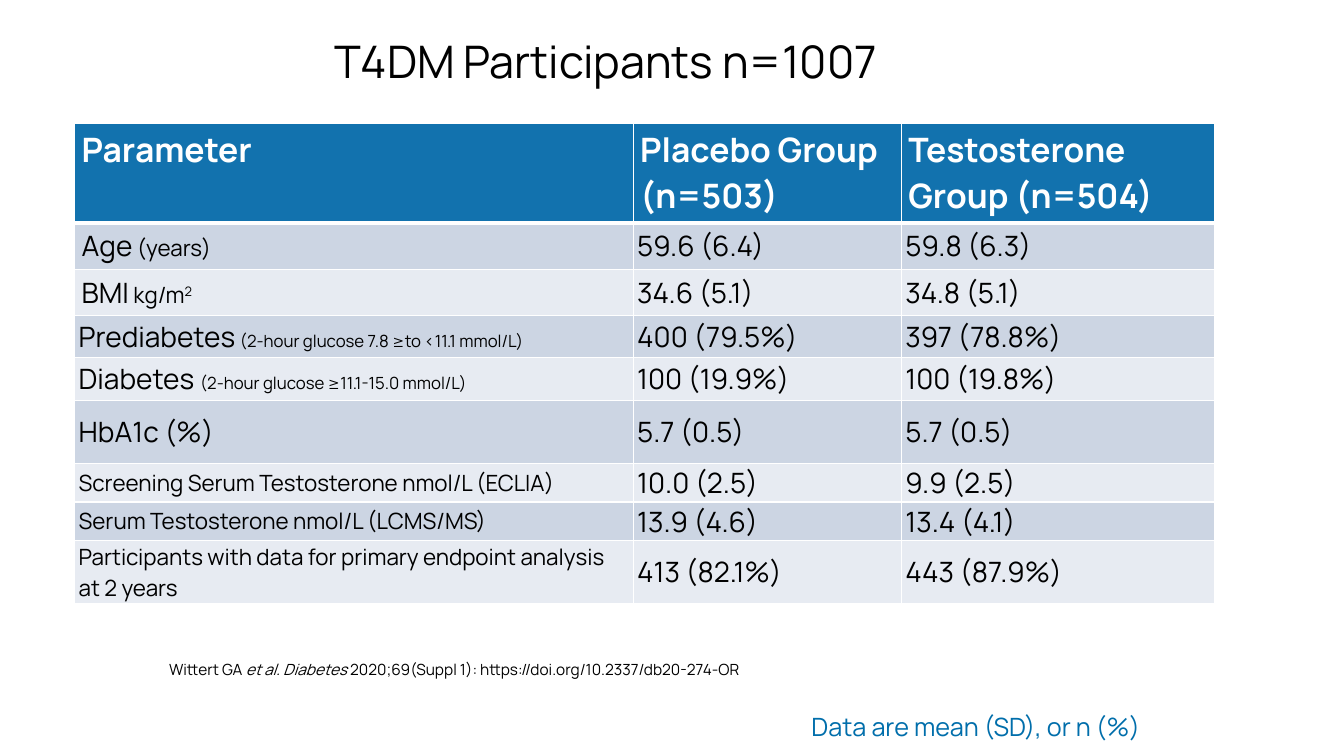
from lxml.etree import SubElement
from pptx import Presentation
from pptx.dml.color import RGBColor
from pptx.enum.text import MSO_ANCHOR as Anchor, MSO_AUTO_SIZE as AutoSize, PP_ALIGN as Align
from pptx.oxml.ns import qn
from pptx.util import Emu, Pt

FONT = "Manrope"
BLACK = RGBColor(0x00, 0x00, 0x00)
WHITE = RGBColor(0xFF, 0xFF, 0xFF)
HEADER_BLUE = RGBColor(0x12, 0x72, 0xAE)
NOTE_BLUE = RGBColor(0x00, 0x6E, 0xAB)
BANDS = (RGBColor(0xCC, 0xD5, 0xE3), RGBColor(0xE7, 0xEB, 0xF2))

COLUMN_WIDTHS = (554, 266, 311)
ROW_HEIGHTS = (72, 41, 41, 42, 42, 63, 31, 31, 63)
WIDE_MARGINS = (7, 4, 7, 4)
NARROW_MARGINS = (4, 0, 4, 0)

HEADERS = ("Parameter", "Placebo Group (n=503)", "Testosterone Group (n=504)")
PARTICIPANTS = (
    ([("Age", 20), (" (years)", 16)], "59.6 (6.4)", "59.8 (6.3)"),
    ([("BMI", 20), (" kg/m", 16), ("2", 16, True)], "34.6 (5.1)", "34.8 (5.1)"),
    ([("Prediabetes", 20), (" ", 16), ("(2-hour glucose 7.8 ≥to <11.1 mmol/L)", 12)],
     "400 (79.5%)", "397 (78.8%)"),
    ([("Diabetes ", 20), ("(2-hour glucose ≥11.1-15.0 mmol/L)", 12)],
     "100 (19.9%)", "100 (19.8%)"),
    ([("HbA1c (%)", 20)], "5.7 (0.5)", "5.7 (0.5)"),
    ([("Screening Serum Testosterone nmol/L (ECLIA)", 16)], "10.0 (2.5)", "9.9 (2.5)"),
    ([("Serum Testosterone nmol/L (LCMS/MS)", 16)], "13.9 (4.6)", "13.4 (4.1)"),
    ([("Participants with data for primary endpoint analysis at 2 years", 16)],
     "413 (82.1%)", "443 (87.9%)"),
)


def px(length):
    return Emu(length * 9144)


def write(paragraph, text, size=20, color=BLACK, bold=False, italic=False, superscript=False):
    run = paragraph.add_run()
    run.text = text
    font = run.font
    font.name = FONT
    font.size = Pt(size)
    font.bold = bold
    font.italic = italic
    font.color.rgb = color
    if superscript:
        run._r.get_or_add_rPr().set("baseline", "30000")


def add_title(slide, text):
    title = slide.shapes.title
    title.left, title.top, title.width, title.height = map(px, (322, 18, 634, 90))
    frame = title.text_frame
    frame.auto_size = AutoSize.NONE
    frame.vertical_anchor = Anchor.MIDDLE
    paragraph = frame.paragraphs[0]
    paragraph.alignment = Align.LEFT
    paragraph.line_spacing = 0.9
    write(paragraph, text, size=32)


def add_text_box(slide, left, top, width, height, wrap=True):
    box = slide.shapes.add_textbox(*map(px, (left, top, width, height)))
    frame = box.text_frame
    frame.word_wrap = wrap
    frame.auto_size = AutoSize.SHAPE_TO_FIT_TEXT
    return frame.paragraphs[0]


def set_borders(cell, top, bottom):
    properties = cell._tc.get_or_add_tcPr()
    for side, points in (("L", 1), ("R", 1), ("T", top), ("B", bottom)):
        line = SubElement(properties, qn(f"a:ln{side}"), w=str(Pt(points)))
        fill = SubElement(line, qn("a:solidFill"))
        SubElement(fill, qn("a:srgbClr"), val=str(WHITE))


def format_cell(cell, fill, margins, anchor=Anchor.MIDDLE, top=1, bottom=1):
    set_borders(cell, top, bottom)
    cell.fill.solid()
    cell.fill.fore_color.rgb = fill
    cell.vertical_anchor = anchor
    cell.margin_left, cell.margin_top, cell.margin_right, cell.margin_bottom = map(px, margins)
    return cell.text_frame.paragraphs[0]


def add_participant_table(slide):
    frame = slide.shapes.add_table(
        len(ROW_HEIGHTS), len(COLUMN_WIDTHS), px(74), px(122),
        px(sum(COLUMN_WIDTHS)), px(sum(ROW_HEIGHTS)))
    table = frame.table
    for column, width in zip(table.columns, COLUMN_WIDTHS):
        column.width = px(width)
    for row, height in zip(table.rows, ROW_HEIGHTS):
        row.height = px(height)

    for index, header in enumerate(HEADERS):
        paragraph = format_cell(table.cell(0, index), HEADER_BLUE, WIDE_MARGINS,
                                anchor=Anchor.TOP, bottom=3)
        write(paragraph, header, size=24, color=WHITE, bold=True)

    for row, (parameter, *values) in enumerate(PARTICIPANTS, start=1):
        band = BANDS[(row - 1) % 2]
        top = 3 if row == 1 else 1
        margins = WIDE_MARGINS if row <= 2 else NARROW_MARGINS
        paragraph = format_cell(table.cell(row, 0), band, margins, top=top)
        for text, size, *superscript in parameter:
            write(paragraph, text, size=size, superscript=bool(superscript))
        for column, value in enumerate(values, start=1):
            paragraph = format_cell(table.cell(row, column), band, NARROW_MARGINS, top=top)
            write(paragraph, value)


def main():
    presentation = Presentation()
    presentation.slide_width, presentation.slide_height = px(1333), px(750)
    slide = presentation.slides.add_slide(presentation.slide_layouts[5])

    add_participant_table(slide)
    add_title(slide, "T4DM Participants n=1007")

    note = add_text_box(slide, 795, 701, 381, 40, wrap=False)
    write(note, "Data are mean (SD), or n (%)", size=18, color=NOTE_BLUE)

    citation = add_text_box(slide, 158, 650, 1070, 29)
    write(citation, "Wittert GA ", size=11)
    write(citation, "et al. Diabetes", size=11, italic=True)
    write(citation, " 2020;69(Suppl 1): https://doi.org/10.2337/db20-274-OR", size=11)

    presentation.save("out.pptx")


if __name__ == "__main__":
    main()
